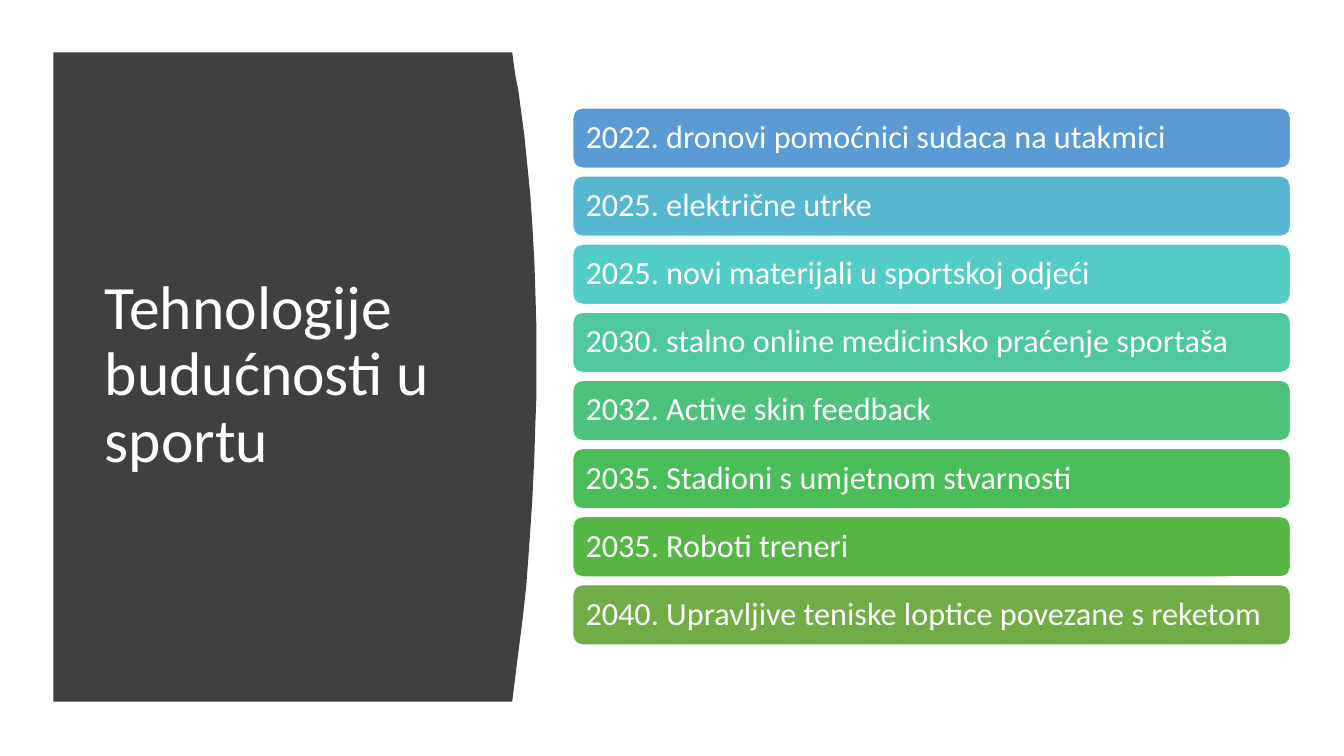
from pptx import Presentation
from pptx.dml.color import RGBColor
from pptx.enum.shapes import MSO_SHAPE
from pptx.enum.text import MSO_ANCHOR, PP_ALIGN
from pptx.util import Inches, Pt

# Content
TITLE = "Tehnologije budućnosti u sportu"
MILESTONES = [
    ("2022. dronovi pomoćnici sudaca na utakmici", "5B9BD5"),
    ("2025. električne utrke", "57B7D1"),
    ("2025. novi materijali u sportskoj odjeći", "53CCC5"),
    ("2030. stalno online medicinsko praćenje sportaša", "4FC7A0"),
    ("2032. Active skin feedback", "4CC27B"),
    ("2035. Stadioni s umjetnom stvarnosti", "48BD58"),
    ("2035. Roboti treneri", "55B646"),
    ("2040. Upravljive teniske loptice povezane s reketom", "70AD47"),
]

THEME = {
    "font": "Calibri",
    "title_size": 44,
    "milestone_size": 23,
    "text": "FFFFFF",
    "outline": "FFFFFF",
    "panel": "404040",
}

# Layout in inches
PANEL_LEFT, PANEL_TOP, PANEL_BOTTOM = 0.53, 0.52, 6.96
PANEL_CURVE = [
    (5.08, 0.52), (5.11, 0.74), (5.14, 0.89), (5.16, 1.04), (5.18, 1.19),
    (5.2, 1.34), (5.23, 1.64), (5.26, 1.94), (5.28, 2.24), (5.3, 2.6),
    (5.31, 2.9), (5.32, 3.25), (5.32, 3.94), (5.31, 4.2), (5.3, 4.52),
    (5.28, 4.95), (5.25, 5.4), (5.22, 5.81), (5.18, 6.17), (5.14, 6.48),
    (5.11, 6.72), (5.08, 6.96),
]
BAR_LEFT, BAR_WIDTH, BAR_HEIGHT = 5.68, 7.12, 0.6
FIRST_BAR_TOP, LAST_BAR_TOP = 1.07, 5.8
BAR_PITCH = (LAST_BAR_TOP - FIRST_BAR_TOP) / (len(MILESTONES) - 1)


def color(code):
    return RGBColor.from_string(code)


def write(frame, text, size):
    frame.word_wrap = True
    frame.vertical_anchor = MSO_ANCHOR.MIDDLE
    frame.margin_left = frame.margin_right = Inches(0.1)
    frame.margin_top = frame.margin_bottom = Inches(0.05)
    paragraph = frame.paragraphs[0]
    paragraph.text = text
    paragraph.alignment = PP_ALIGN.LEFT
    paragraph.line_spacing = 0.9
    font = paragraph.runs[0].font
    font.name = THEME["font"]
    font.size = Pt(size)
    font.color.rgb = color(THEME["text"])


def add_panel(slide):
    outline = slide.shapes.build_freeform(Inches(PANEL_LEFT), Inches(PANEL_TOP))
    edge = PANEL_CURVE + [(PANEL_LEFT, PANEL_BOTTOM)]
    outline.add_line_segments([(Inches(x), Inches(y)) for x, y in edge], close=True)
    panel = outline.convert_to_shape()
    panel.shadow.inherit = False
    panel.fill.solid()
    panel.fill.fore_color.rgb = color(THEME["panel"])
    panel.line.fill.background()


def add_milestone(slide, top, text, fill):
    bar = slide.shapes.add_shape(
        MSO_SHAPE.ROUNDED_RECTANGLE,
        Inches(BAR_LEFT), Inches(top), Inches(BAR_WIDTH), Inches(BAR_HEIGHT),
    )
    bar.shadow.inherit = False
    bar.fill.solid()
    bar.fill.fore_color.rgb = color(fill)
    bar.line.color.rgb = color(THEME["outline"])
    bar.line.width = Pt(1)
    write(bar.text_frame, text, THEME["milestone_size"])


def main():
    deck = Presentation()
    deck.slide_width, deck.slide_height = Inches(13.33), Inches(7.5)
    slide = deck.slides.add_slide(deck.slide_layouts[6])

    # Title on the curved panel
    add_panel(slide)
    title = slide.shapes.add_textbox(Inches(0.94), Inches(1.11), Inches(3.74), Inches(5.24))
    write(title.text_frame, TITLE, THEME["title_size"])

    # Timeline of milestones
    for row, (text, fill) in enumerate(MILESTONES):
        add_milestone(slide, FIRST_BAR_TOP + row * BAR_PITCH, text, fill)

    deck.save("out.pptx")


if __name__ == "__main__":
    main()
